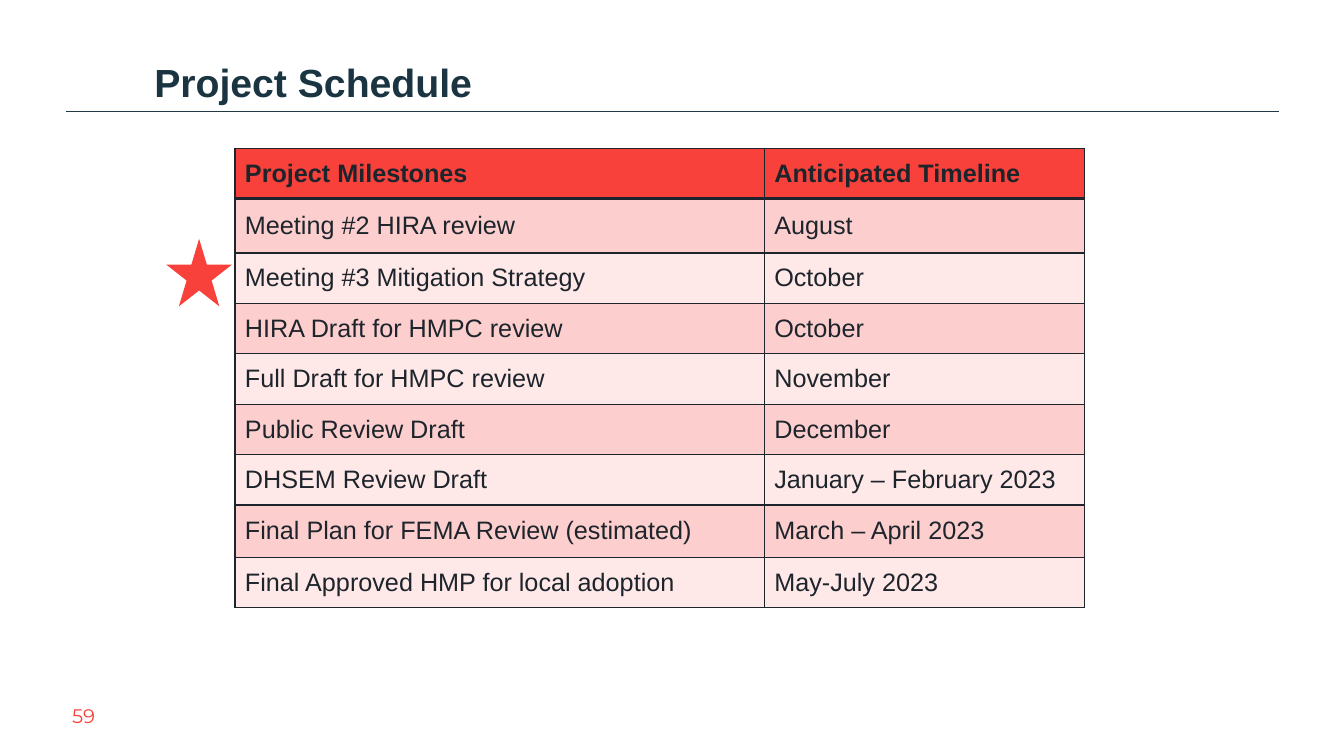
import pptx
import pptx.util
import pptx.dml.color
import pptx.enum.shapes
import pptx.enum.text
import pptx.oxml.ns
from dataclasses import dataclass
from lxml import etree
from pptx.util import Inches


@dataclass(frozen=True)
class Theme:
    title_color: str = "1A3441"
    rule_color: str = "233845"
    accent: str = "F8413A"
    number_color: str = "F7413A"
    ink: str = "1D242B"
    bands: tuple = ("FCCFCE", "FEE9E8")
    font: str = "Arial"
    number_font: str = "Montserrat"
    title_size: int = 28
    table_size: int = 18
    number_size: int = 14
    border: int = 1
    header_border: int = 3


MILESTONES = [
    ("Project Milestones", "Anticipated Timeline"),
    ("Meeting #2 HIRA review", "August"),
    ("Meeting #3 Mitigation Strategy", "October"),
    ("HIRA Draft for HMPC review", "October"),
    ("Full Draft for HMPC review", "November"),
    ("Public Review Draft", "December"),
    ("DHSEM Review Draft", "January – February 2023"),
    ("Final Plan for FEMA Review (estimated)", "March – April 2023"),
    ("Final Approved HMP for local adoption", "May-July 2023"),
]
COLUMN_WIDTHS = (5.25, 3.18)
ROW_HEIGHTS = (0.5, 0.54, 0.5, 0.5, 0.5, 0.5, 0.5, 0.52, 0.5)


def rgb(color):
    return pptx.dml.color.RGBColor.from_string(color)


def add_element(parent, tag, **attributes):
    return etree.SubElement(parent, pptx.oxml.ns.qn(tag), **attributes)


class SlideBuilder:
    def __init__(self, presentation, theme):
        self.theme = theme
        title_only = presentation.slide_layouts[5]
        self.slide = presentation.slides.add_slide(title_only)

    def style(self, paragraph, size, color, bold=False, font=None):
        paragraph.font.name = font or self.theme.font
        paragraph.font.size = pptx.util.Pt(size)
        paragraph.font.bold = bold
        paragraph.font.color.rgb = rgb(color)

    def title(self, text, left, top, width, height):
        shape = self.slide.shapes.title
        shape.left, shape.top = Inches(left), Inches(top)
        shape.width, shape.height = Inches(width), Inches(height)
        frame = shape.text_frame
        frame.text = text
        frame.word_wrap = True
        frame.auto_size = pptx.enum.text.MSO_AUTO_SIZE.NONE
        frame.vertical_anchor = pptx.enum.text.MSO_ANCHOR.BOTTOM
        frame.margin_left = frame.margin_right = 0
        frame.margin_top = frame.margin_bottom = 0
        paragraph = frame.paragraphs[0]
        paragraph.alignment = pptx.enum.text.PP_ALIGN.LEFT
        paragraph.line_spacing = 1.2
        paragraph.space_before = pptx.util.Pt(10)
        self.style(paragraph, self.theme.title_size, self.theme.title_color, bold=True)

    def rule(self, left, right, top):
        connector = self.slide.shapes.add_connector(
            pptx.enum.shapes.MSO_CONNECTOR.STRAIGHT,
            Inches(left), Inches(top), Inches(right), Inches(top))
        connector.line.color.rgb = rgb(self.theme.rule_color)
        connector.line.width = pptx.util.Pt(0.5)
        add_element(connector._element.spPr, "a:effectLst")

    def star(self, left, top, width, height):
        shape = self.slide.shapes.add_shape(
            pptx.enum.shapes.MSO_SHAPE.STAR_5_POINT,
            Inches(left), Inches(top), Inches(width), Inches(height))
        shape.shadow.inherit = False
        shape.fill.solid()
        shape.fill.fore_color.rgb = rgb(self.theme.accent)
        shape.line.fill.background()

    def page_number(self, text, left, top, width, height):
        box = self.slide.shapes.add_textbox(
            Inches(left), Inches(top), Inches(width), Inches(height))
        frame = box.text_frame
        frame.text = text
        frame.word_wrap = True
        frame.vertical_anchor = pptx.enum.text.MSO_ANCHOR.MIDDLE
        paragraph = frame.paragraphs[0]
        paragraph.alignment = pptx.enum.text.PP_ALIGN.CENTER
        self.style(paragraph, self.theme.number_size, self.theme.number_color,
                   font=self.theme.number_font)

    def cell_borders(self, cell, row):
        properties = cell._tc.get_or_add_tcPr()
        heavy_side = {0: "a:lnB", 1: "a:lnT"}.get(row)
        for side in ("a:lnL", "a:lnR", "a:lnT", "a:lnB"):
            width = self.theme.header_border if side == heavy_side else self.theme.border
            line = add_element(properties, side, w=str(pptx.util.Pt(width)))
            fill = add_element(line, "a:solidFill")
            add_element(fill, "a:srgbClr", val=self.theme.ink)

    def table(self, rows, column_widths, row_heights, left, top):
        table = self.slide.shapes.add_table(
            len(rows), len(column_widths), Inches(left), Inches(top),
            Inches(sum(column_widths)), Inches(sum(row_heights))).table
        for column, width in zip(table.columns, column_widths):
            column.width = Inches(width)
        for index, (texts, height) in enumerate(zip(rows, row_heights)):
            table.rows[index].height = Inches(height)
            is_header = index == 0
            color = self.theme.accent if is_header else self.theme.bands[(index - 1) % 2]
            for cell, text in zip(table.rows[index].cells, texts):
                cell.text = text
                cell.vertical_anchor = pptx.enum.text.MSO_ANCHOR.MIDDLE
                self.style(cell.text_frame.paragraphs[0], self.theme.table_size,
                           self.theme.ink, bold=is_header)
                self.cell_borders(cell, index)
                cell.fill.solid()
                cell.fill.fore_color.rgb = rgb(color)


def main():
    presentation = pptx.Presentation()
    presentation.slide_width = Inches(13.33)
    presentation.slide_height = Inches(7.5)
    builder = SlideBuilder(presentation, Theme())

    # Page number and heading
    builder.page_number("59", 0, 6.9, 1.66, 0.4)
    builder.rule(0.65, 12.69, 1.1)
    builder.title("Project Schedule", 1.53, 0.38, 11.97, 0.67)

    # Schedule with the current milestone starred
    builder.star(1.65, 2.37, 0.65, 0.67)
    builder.table(MILESTONES, COLUMN_WIDTHS, ROW_HEIGHTS, 2.33, 1.47)

    presentation.save("out.pptx")


if __name__ == "__main__":
    main()
